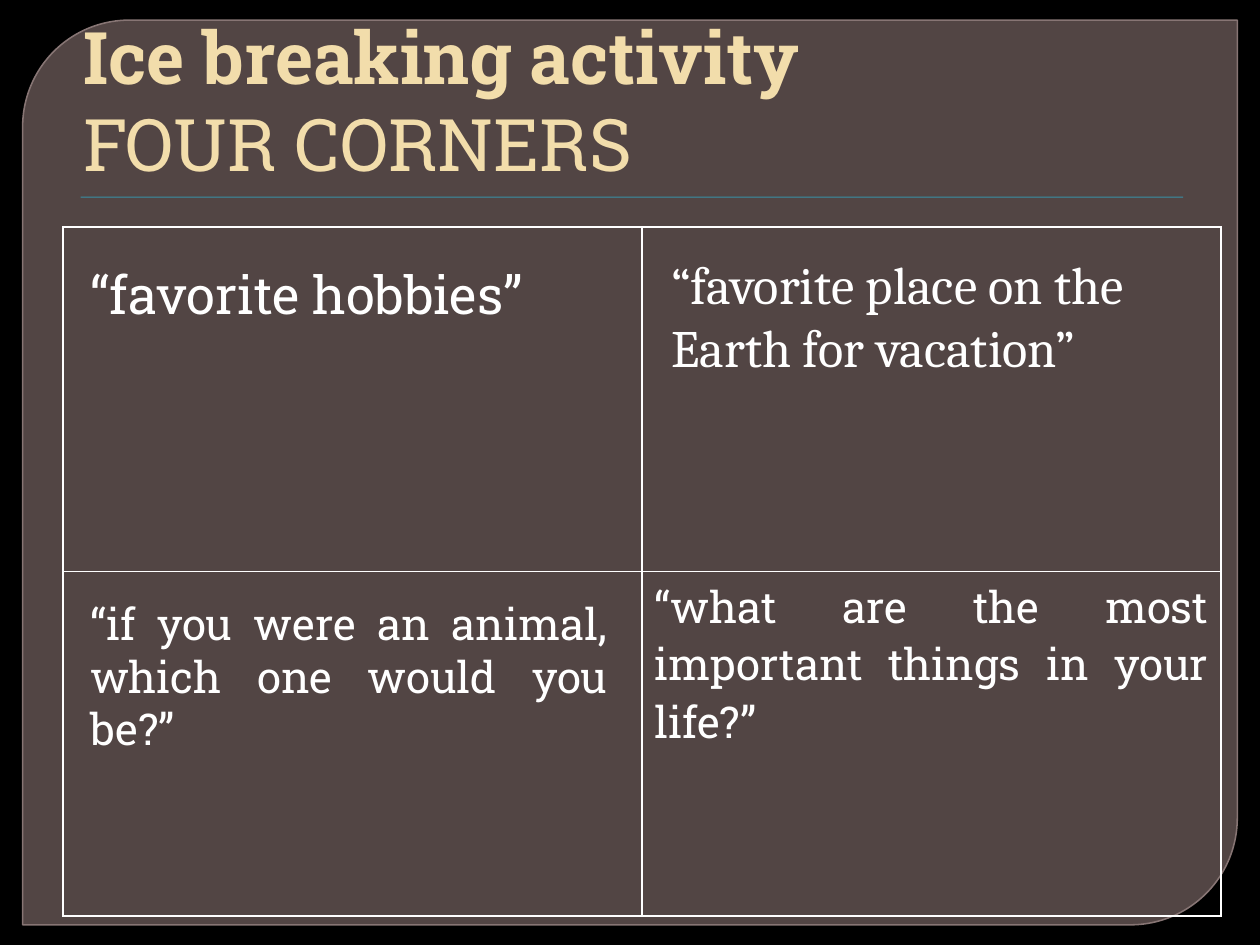
from lxml.etree import SubElement as Sub
from pptx import Presentation
from pptx.dml.color import RGBColor
from pptx.enum.shapes import MSO_SHAPE as Shape
from pptx.enum.text import MSO_ANCHOR as Anchor, PP_ALIGN as Align
from pptx.oxml.ns import qn
from pptx.util import Inches, Pt

BLACK = RGBColor(0x00, 0x00, 0x00)
PANEL = RGBColor(0x52, 0x45, 0x44)
EDGE = RGBColor(0x87, 0x75, 0x74)
TEAL = RGBColor(0x38, 0x91, 0xA7)
CREAM = RGBColor(0xF2, 0xDD, 0xAB)
WHITE = RGBColor(0xFF, 0xFF, 0xFF)
SLAB = "Roboto Slab"
SERIF = "Cambria"


def style(para, size, color, face=SLAB, align=Align.LEFT):
    """Format a whole paragraph."""
    para.alignment = align
    font = para.font
    font.size, font.name, font.color.rgb = Pt(size), face, color


def add_block(slide, kind, box, fill):
    """Add a flat filled shape without a line."""
    block = slide.shapes.add_shape(kind, *map(Inches, box))
    block.shadow.inherit = False
    block.fill.solid()
    block.fill.fore_color.rgb = fill
    block.line.fill.background()
    return block


def add_frame(slide, box):
    """Fill the backdrop and draw the panel with two round corners."""
    slide.background.fill.solid()
    slide.background.fill.fore_color.rgb = BLACK
    panel = add_block(slide, Shape.ROUND_2_DIAG_RECTANGLE, box, PANEL)
    panel.adjustments[0], panel.adjustments[1] = 0.118, 0
    panel.line.color.rgb = EDGE
    panel.line.width = Pt(0.87)


def add_title(slide, box):
    """Place the two-line title, in front of the panel, above its rule."""
    left, top, _, height = box
    add_block(slide, Shape.RECTANGLE, (left + 0.14, top + height + 0.03, 8.75, 0.01), TEAL)
    title = slide.shapes.title
    slide.shapes._spTree.append(title._element)
    title.left, title.top, title.width, title.height = map(Inches, box)
    frame = title.text_frame
    frame.word_wrap = True
    frame.vertical_anchor = Anchor.BOTTOM
    frame.margin_left = Inches(0.16)
    para = frame.paragraphs[0]
    head = para.add_run()
    head.text = "Ice breaking activity"
    head.font.bold = True
    para.add_line_break()
    para.add_run().text = "FOUR CORNERS"
    style(para, 41.4, CREAM)


def add_grid(slide, box):
    """Draw the two-by-two table and return its last cell."""
    table = slide.shapes.add_table(2, 2, *map(Inches, box)).table
    table.first_row = table.horz_banding = False
    for cell in table.iter_cells():
        props = cell._tc.get_or_add_tcPr()
        for side in ("lnL", "lnR", "lnT", "lnB"):
            line = Sub(props, qn(f"a:{side}"), w=str(Pt(1)))
            fill = Sub(line, qn("a:solidFill"))
            Sub(fill, qn("a:srgbClr"), val=str(WHITE))
        cell.fill.background()
    return table.cell(1, 1)


def add_prompt(slide, box, text, **look):
    """Place one prompt in a wrapped text box."""
    frame = slide.shapes.add_textbox(*map(Inches, box)).text_frame
    frame.word_wrap = True
    frame.text = text
    style(frame.paragraphs[0], color=WHITE, **look)


def add_corners(slide, box):
    """Draw the four corners with a prompt in each."""
    left, top, _, _ = box
    cell = add_grid(slide, box)
    cell.text = "“what are the most important things in your life?”"
    style(cell.text_frame.paragraphs[0], 25, WHITE, align=Align.JUSTIFY)
    add_prompt(slide, (left + 0.12, top + 0.23, 4.14, 0.61),
               "“favorite hobbies”", size=30)
    add_prompt(slide, (left + 4.73, top + 0.15, 4.77, 1.11),
               "“favorite place on the Earth for vacation”", size=30, face=SERIF)
    add_prompt(slide, (left + 0.12, top + 2.89, 4.3, 0.94),
               "“if you were an animal, which one would you be?”",
               size=25, align=Align.JUSTIFY)


def main():
    """Build and save the slide."""
    deck = Presentation()
    deck.slide_width, deck.slide_height = Inches(10), Inches(7.5)
    slide = deck.slides.add_slide(deck.slide_layouts[5])
    add_frame(slide, (0.18, 0.16, 9.64, 7.18))
    add_title(slide, (0.5, 0.28, 9, 1.25))
    add_corners(slide, (0.5, 1.8, 9.19, 5.47))
    deck.save("out.pptx")


if __name__ == "__main__":
    main()
